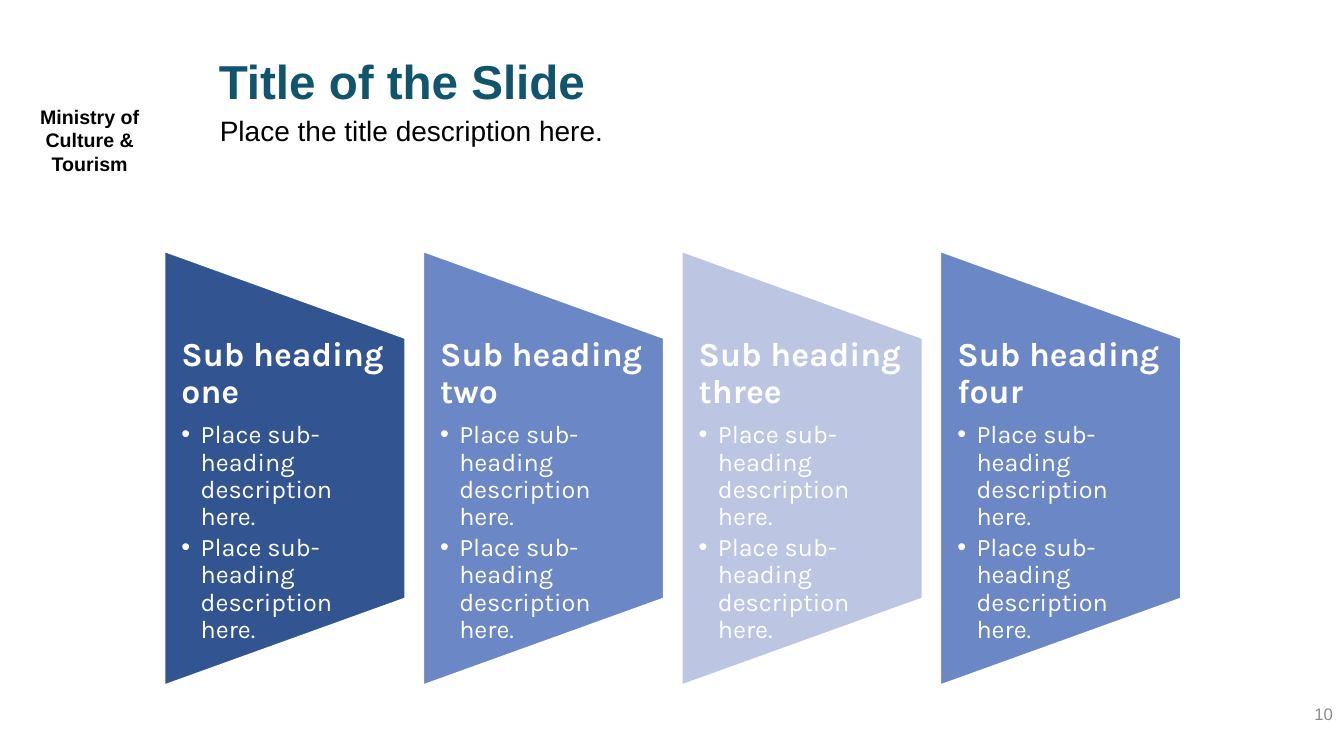
"""Build a slide with four tapered panels of headed bullet points."""
from dataclasses import dataclass

from lxml.etree import SubElement
from pptx import Presentation
from pptx.dml.color import RGBColor
from pptx.enum.shapes import MSO_SHAPE
from pptx.enum.text import MSO_ANCHOR, MSO_AUTO_SIZE, PP_ALIGN
from pptx.oxml.ns import qn
from pptx.util import Inches, Pt

TITLE = "Title of the Slide"
DESCRIPTION = "Place the title description here."
MINISTRY = ["Ministry of", "Culture & Tourism"]
PAGE_NUMBER = "10"
POINTS = ["Place sub-heading description here."] * 2
PANELS = [
    ("Sub heading one", "325491"),
    ("Sub heading two", "6C87C5"),
    ("Sub heading three", "BCC6E2"),
    ("Sub heading four", "6C87C5"),
]


@dataclass(frozen=True)
class Theme:
    """Colours, fonts and type sizes of the slide."""
    plain: str = "Arial"
    accent: str = "Karla"
    title: str = "10546D"
    ink: str = "000000"
    muted: str = "8C8C8C"
    white: str = "FFFFFF"
    title_size: int = 34
    heading_size: int = 24
    description_size: int = 20
    point_size: int = 18
    ministry_size: int = 14
    number_size: int = 12


THEME = Theme()
WIDTH, HEIGHT = 13.33, 7.5
PANEL_LEFT, PANEL_STEP = 1.63, 2.565
PANEL_WIDTH, PANEL_HEIGHT = 2.39, 4.31
PANEL_MIDDLE = 4.645
TEXT_HEIGHT = PANEL_HEIGHT * 0.6
PANEL_INSET, BULLET_INDENT = 0.17, 0.19


def place(box, left, top, width, height):
    for name, value in dict(left=left, top=top, width=width, height=height).items():
        setattr(box, name, Inches(value))


def set_frame(box, side, end, anchor=MSO_ANCHOR.TOP):
    formats = dict(
        word_wrap=True, auto_size=MSO_AUTO_SIZE.NONE, vertical_anchor=anchor,
        margin_left=Inches(side), margin_right=Inches(side),
        margin_top=Inches(end), margin_bottom=Inches(end),
    )
    for name, value in formats.items():
        setattr(box.text_frame, name, value)


def write(para, text, size, color, font=THEME.plain, bold=False, **spacing):
    for name, value in spacing.items():
        setattr(para, name, value)
    span = para.add_run()
    span.text = text
    for name, value in dict(name=font, size=Pt(size), bold=bold).items():
        setattr(span.font, name, value)
    span.font.color.rgb = RGBColor.from_string(color)


def set_bullet(para, symbol=None, indent=0):
    properties = para._p.get_or_add_pPr()
    properties.set("marL", str(Inches(indent)))
    properties.set("indent", str(-Inches(indent)))
    if symbol:
        SubElement(properties, qn("a:buFont"), typeface=THEME.plain)
        SubElement(properties, qn("a:buChar"), char=symbol)
    else:
        SubElement(properties, qn("a:buNone"))


def add_box(page, *area):
    return page.shapes.add_textbox(*map(Inches, area))


def add_header(page):
    title, body = page.shapes.title, page.placeholders[1]
    place(title, 2.17, 0.53, 8.38, 0.53)
    place(body, 2.18, 1.23, 8.45, 0.68)
    for box in (title, body):
        set_frame(box, 0, 0)
    write(title.text_frame.paragraphs[0], TITLE, THEME.title_size, THEME.title,
          bold=True, alignment=PP_ALIGN.LEFT, line_spacing=Pt(40))
    para = body.text_frame.paragraphs[0]
    set_bullet(para)
    write(para, DESCRIPTION, THEME.description_size, THEME.ink,
          line_spacing=Pt(16.5), space_before=Pt(0))


def add_panel(page, column, heading, color):
    left = PANEL_LEFT + column * PANEL_STEP
    center = left + PANEL_WIDTH / 2
    panel = page.shapes.add_shape(
        MSO_SHAPE.FLOWCHART_MANUAL_OPERATION,
        Inches(center - PANEL_HEIGHT / 2), Inches(PANEL_MIDDLE - PANEL_WIDTH / 2),
        Inches(PANEL_HEIGHT), Inches(PANEL_WIDTH))
    panel.rotation = 270
    panel.shadow.inherit = False
    panel.fill.solid()
    panel.fill.fore_color.rgb = RGBColor.from_string(color)
    panel.line.color.rgb = RGBColor.from_string(THEME.white)
    panel.line.width = Pt(1.5)

    box = add_box(page, left, PANEL_MIDDLE - TEXT_HEIGHT / 2, PANEL_WIDTH, TEXT_HEIGHT)
    set_frame(box, PANEL_INSET, 0)
    write(box.text_frame.paragraphs[0], heading, THEME.heading_size, THEME.white,
          THEME.accent, True, line_spacing=0.9, space_after=Pt(THEME.heading_size * 0.35))
    for point in POINTS:
        para = box.text_frame.add_paragraph()
        set_bullet(para, "•", BULLET_INDENT)
        write(para, point, THEME.point_size, THEME.white, THEME.accent,
              line_spacing=0.9, space_after=Pt(THEME.point_size * 0.15))


def main():
    deck = Presentation()
    deck.slide_width, deck.slide_height = Inches(WIDTH), Inches(HEIGHT)
    page = deck.slides.add_slide(deck.slide_layouts[1])
    add_header(page)

    ministry = add_box(page, 0, 0.99, 1.78, 0.57)
    set_frame(ministry, 0.1, 0.05)
    frame = ministry.text_frame
    for row, line in enumerate(MINISTRY):
        para = frame.add_paragraph() if row else frame.paragraphs[0]
        write(para, line, THEME.ministry_size, THEME.ink, bold=True,
              alignment=PP_ALIGN.CENTER)

    number = add_box(page, 10.32, 6.88, 3, 0.4)
    set_frame(number, 0.1, 0.05, MSO_ANCHOR.MIDDLE)
    write(number.text_frame.paragraphs[0], PAGE_NUMBER, THEME.number_size,
          THEME.muted, alignment=PP_ALIGN.RIGHT)

    for column, (heading, color) in enumerate(PANELS):
        add_panel(page, column, heading, color)
    deck.save("out.pptx")


if __name__ == "__main__":
    main()
